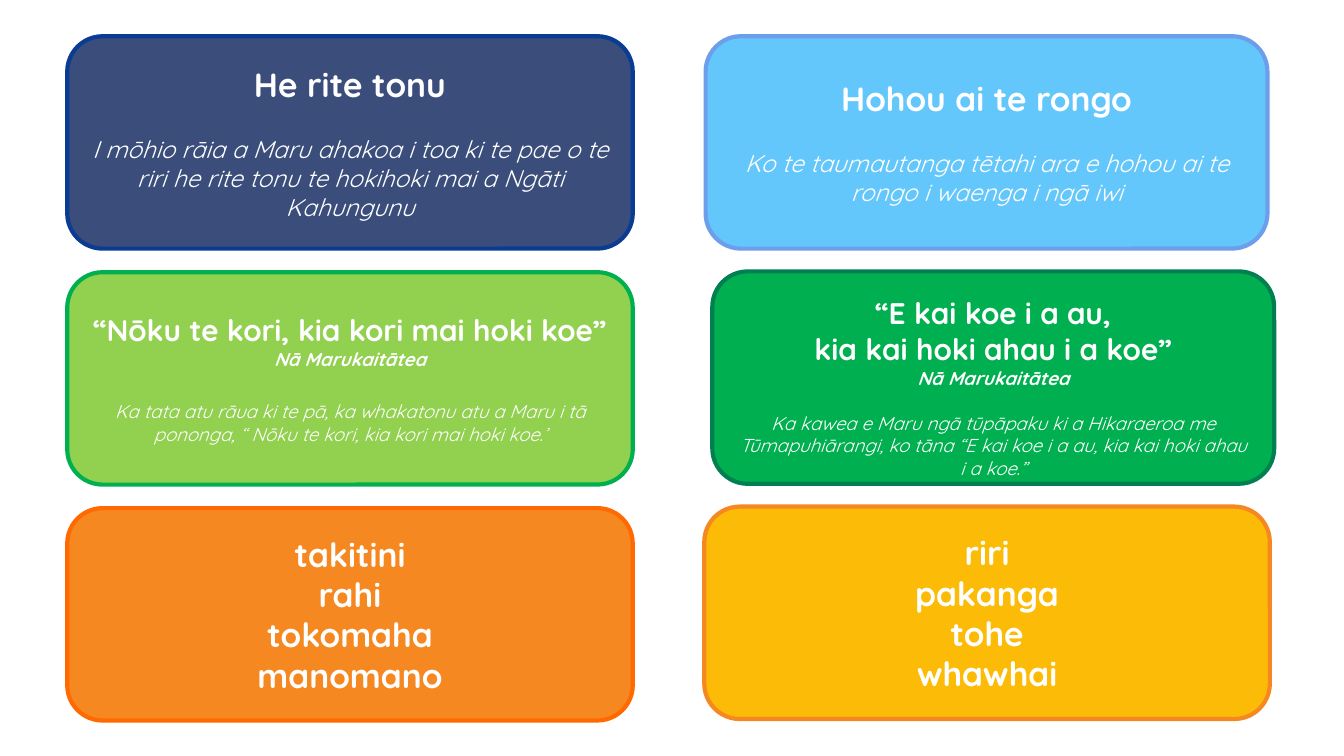
from pptx import Presentation
from pptx.dml.color import RGBColor as RGB
from pptx.enum.shapes import MSO_SHAPE as SHAPE
from pptx.enum.text import MSO_ANCHOR as ANCHOR, PP_ALIGN as ALIGN
from pptx.util import Pt

FONT = "Quicksand"
HEIGHT = 113.8
INSET = 7.2
HUES = {
    "white": "FFFFFF", "navy": "3B4D7A", "royal": "093C92",
    "sky": "64C7FB", "blue": "6D9EEB", "lime": "92D050",
    "green": "00B050", "pine": "007F50", "orange": "F58820",
    "flame": "FF6900", "gold": "FCBB07",
}


def hue(name):
    return RGB.from_string(HUES[name])


def add_line(para, text, size, bold=True, slant=False, gap=0):
    para.alignment = ALIGN.CENTER
    if gap:
        para.space_before = Pt(gap)
    run = para.add_run()
    run.text = text
    font = run.font
    font.name, font.size = FONT, Pt(size)
    font.bold, font.italic = bold, slant
    font.color.rgb = hue("white")


def add_card(slide, box, fill, edge, lines, top=INSET, base=INSET):
    card = slide.shapes.add_shape(SHAPE.ROUNDED_RECTANGLE, *map(Pt, box))
    card.shadow.inherit = False
    card.fill.solid()
    card.fill.fore_color.rgb = hue(fill)
    card.line.color.rgb = hue(edge)
    card.line.width = Pt(2.25)
    frame = card.text_frame
    frame.word_wrap = True
    frame.vertical_anchor = ANCHOR.MIDDLE
    frame.margin_left = frame.margin_right = Pt(INSET)
    frame.margin_top, frame.margin_bottom = Pt(top), Pt(base)
    for i, line in enumerate(lines):
        para = frame.add_paragraph() if i else frame.paragraphs[0]
        add_line(para, *line)


def theme_card(slide, box, fill, edge, title, note):
    lines = [(title, 18), (note, 13, False, True, 16)]
    add_card(slide, box, fill, edge, lines)


def quote_card(slide, box, fill, edge, quote, note, gap, **pads):
    lines = [(part, 16) for part in quote]
    lines += [("Nā Marukaitātea", 10, True, True),
              (note, 10, False, True, gap)]
    add_card(slide, box, fill, edge, lines, **pads)


def word_card(slide, box, fill, edge, words):
    add_card(slide, box, fill, edge, [(word, 18) for word in words])


def main():
    deck = Presentation()
    deck.slide_width, deck.slide_height = Pt(720), Pt(405)
    slide = deck.slides.add_slide(deck.slide_layouts[6])
    left = [(36, 19.4 + 126.4 * row, 303, HEIGHT) for row in range(3)]
    right = [(x, 19.4 + 126 * row, wide, HEIGHT) for row, (x, wide)
             in enumerate([(378, 301), (381.6, 301), (377.3, 303)])]

    theme_card(slide, left[0], "navy", "royal", "He rite tonu",
               "I mōhio rāia a Maru ahakoa i toa ki te pae o te riri "
               "he rite tonu te hokihoki mai a Ngāti Kahungunu")
    theme_card(slide, right[0], "sky", "blue", "Hohou ai te rongo",
               "Ko te taumautanga tētahi ara e hohou ai te rongo "
               "i waenga i ngā iwi")
    quote_card(slide, left[1], "lime", "green",
               ["“Nōku te kori, kia kori mai hoki koe”"],
               "Ka tata atu rāua ki te pā, ka whakatonu atu a Maru i tā "
               "pononga, “ Nōku te kori, kia kori mai hoki koe.’", 16)
    quote_card(slide, right[1], "green", "pine",
               ["“E kai koe i a au,", "kia kai hoki ahau i a koe”"],
               "Ka kawea e Maru ngā tūpāpaku ki a Hikaraeroa me "
               "Tūmapuhiārangi, ko tāna “E kai koe i a au, "
               "kia kai hoki ahau i a koe.”", 12, top=10, base=0)
    word_card(slide, left[2], "orange", "flame",
              ["takitini", "rahi", "tokomaha", "manomano"])
    word_card(slide, right[2], "gold", "orange",
              ["riri", "pakanga", "tohe", "whawhai"])
    deck.save("out.pptx")


if __name__ == "__main__":
    main()
